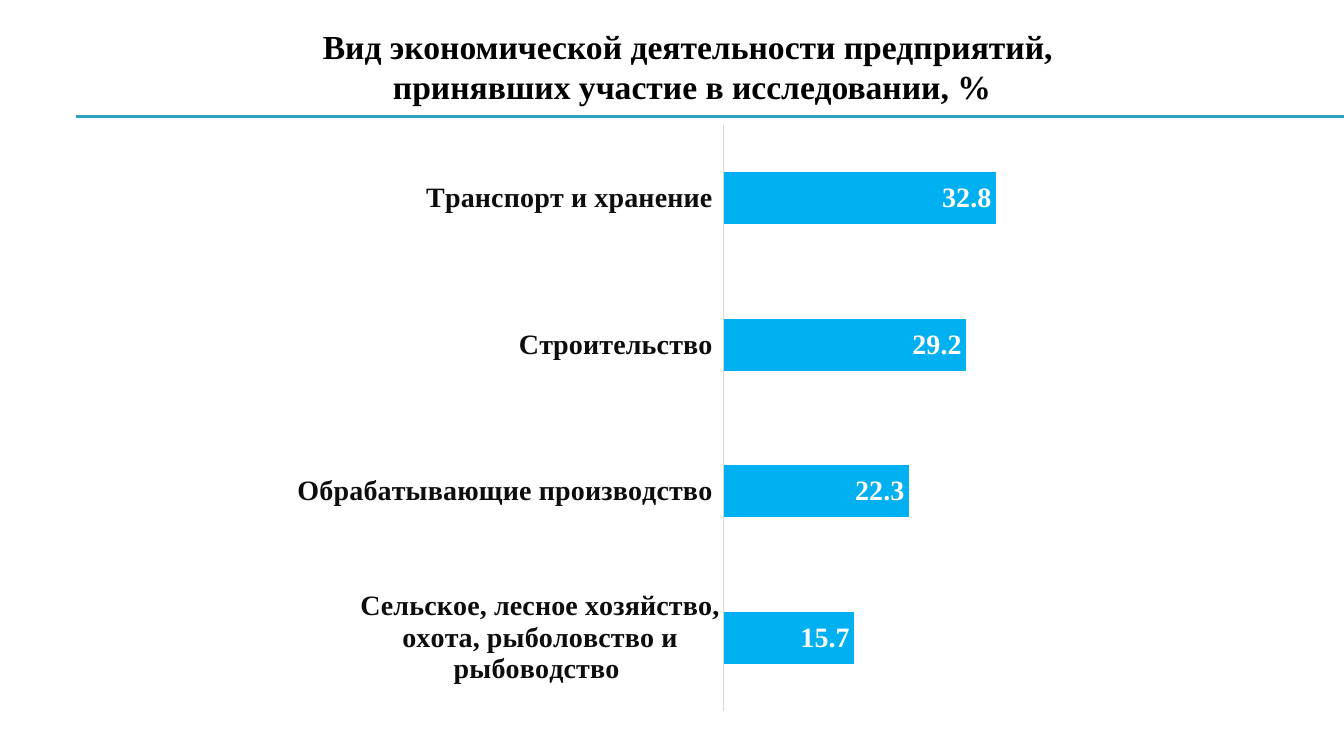
from pptx import Presentation
from pptx.chart.data import CategoryChartData
from pptx.dml.color import RGBColor
from pptx.enum.chart import XL_CHART_TYPE, XL_LABEL_POSITION, XL_TICK_MARK
from pptx.enum.shapes import MSO_CONNECTOR
from pptx.enum.text import MSO_AUTO_SIZE, PP_ALIGN
from pptx.oxml.ns import qn
from pptx.util import Emu, Pt
from lxml.etree import SubElement

TITLE = ["Вид экономической деятельности предприятий, ",
         "принявших участие в исследовании, %"]
ACTIVITIES = [
    ("Сельское, лесное хозяйство, охота, рыболовство и рыбоводство ", 15.7),
    ("Обрабатывающие производство ", 22.3),
    ("Строительство ", 29.2),
    ("Транспорт и хранение ", 32.8),
]
COLORS = {"title": "000000", "category": "0D0D0D", "value": "FFFFFF",
          "bar": "00B0F0", "axis": "D9D9D9", "rule": "2DA2BF"}
SERIF = "Times New Roman"
FONTS = {
    "title": {"name": SERIF, "size": Pt(24), "bold": True},
    "category": {"name": SERIF, "size": Pt(20), "bold": True},
    "value": {"name": SERIF, "size": Pt(20), "bold": True},
}
SLIDE = (1344, 756)
TITLE_BOX = (140, 21, 1104, 92)
CHART_BOX = (283, 113, 746, 611)
PLOT_BOX = (724, 125, 290, 586)
RULE_LEFT, RULE_TOPS = 76, (116, 117)
AXIS_MAX = 35


def px(length):
    return Emu(round(length * 914400 / 100.8))


def color(part):
    return RGBColor.from_string(COLORS[part])


def style(font, part):
    for key, value in FONTS[part].items():
        setattr(font, key, value)
    font.color.rgb = color(part)


def draw_rules(slide):
    for top in RULE_TOPS:
        rule = slide.shapes.add_connector(
            MSO_CONNECTOR.STRAIGHT, px(RULE_LEFT), px(top), px(SLIDE[0]), px(top))
        rule.line.color.rgb = color("rule")
        rule.line.width = Pt(0.75)
        SubElement(rule._element.spPr, qn("a:effectLst"))


def draw_title(slide):
    frame = slide.shapes.add_textbox(*map(px, TITLE_BOX)).text_frame
    frame.word_wrap = True
    frame.auto_size = MSO_AUTO_SIZE.SHAPE_TO_FIT_TEXT
    frame.text = "\n".join(TITLE)
    for line in frame.paragraphs:
        line.alignment = PP_ALIGN.CENTER
        style(line.runs[0].font, "title")


def place_plot(chart):
    plot_area = chart._chartSpace.chart.plotArea
    layout = plot_area.find(qn("c:layout"))
    if layout is None:
        layout = SubElement(plot_area, qn("c:layout"))
        plot_area.insert(0, layout)
    manual = SubElement(layout, qn("c:manualLayout"))
    left, top, width, height = CHART_BOX
    x, y, w, h = PLOT_BOX
    for tag, value in [("layoutTarget", "inner"), ("xMode", "edge"), ("yMode", "edge"),
                       ("x", (x - left) / width), ("y", (y - top) / height),
                       ("w", w / width), ("h", h / height)]:
        SubElement(manual, qn(f"c:{tag}")).set("val", str(value))


def draw_chart(slide):
    data = CategoryChartData(number_format="0.0")
    data.categories = [activity for activity, share in ACTIVITIES]
    data.add_series("Series 1", [share for activity, share in ACTIVITIES])
    chart = slide.shapes.add_chart(
        XL_CHART_TYPE.BAR_CLUSTERED, *map(px, CHART_BOX), data).chart
    chart.has_legend = chart.has_title = False
    chart.font.name, chart.font.size = "Roboto", Pt(10)

    categories = chart.category_axis
    categories.major_tick_mark = categories.minor_tick_mark = XL_TICK_MARK.NONE
    categories.format.line.color.rgb = color("axis")
    categories.format.line.width = Pt(0.75)
    style(categories.tick_labels.font, "category")

    shares = chart.value_axis
    shares.visible = shares.has_major_gridlines = False
    shares.minimum_scale, shares.maximum_scale = 0, AXIS_MAX

    bars = chart.plots[0]
    bars.vary_by_categories = False
    bars.gap_width = 182
    fill = bars.series[0].format.fill
    fill.solid()
    fill.fore_color.rgb = color("bar")

    labels = bars.series[0].data_labels
    labels.show_value = True
    labels.position = XL_LABEL_POSITION.INSIDE_END
    labels.number_format, labels.number_format_is_linked = "0.0", False
    style(labels.font, "value")
    place_plot(chart)


def main():
    deck = Presentation()
    deck.slide_width, deck.slide_height = map(px, SLIDE)
    slide = deck.slides.add_slide(deck.slide_layouts[6])
    draw_rules(slide)
    draw_title(slide)
    draw_chart(slide)
    deck.save("out.pptx")


if __name__ == "__main__":
    main()
